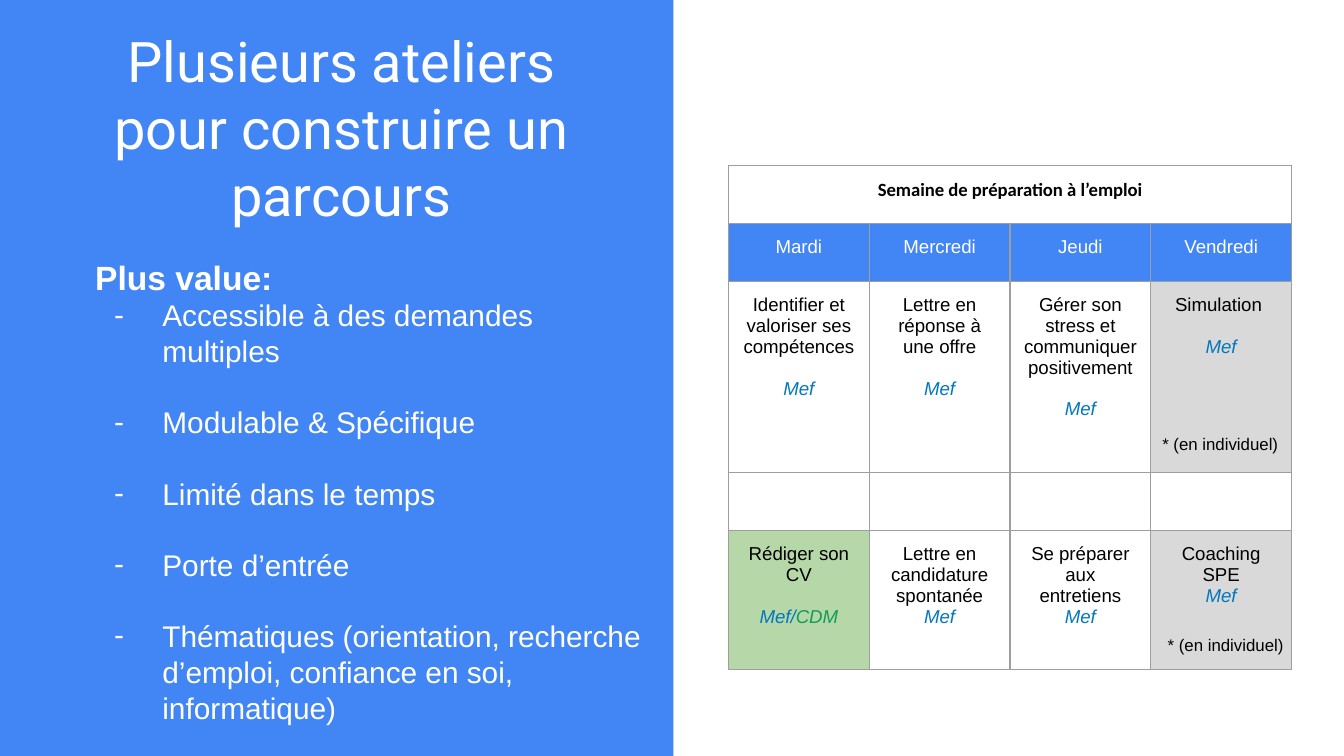
from pptx import Presentation
from pptx.dml.color import RGBColor
from pptx.enum.shapes import MSO_SHAPE
from pptx.enum.text import MSO_ANCHOR, PP_ALIGN
from pptx.oxml import parse_xml
from pptx.oxml.ns import nsdecls
from pptx.util import Inches, Pt

THEME = {
    "blue": "4285F4", "white": "FFFFFF", "black": "000000", "border": "9E9E9E",
    "mef": "0277BD", "cdm": "0F9D58", "solo": "D9D9D9", "shared": "B6D7A8",
    "title_font": "Roboto", "body_font": "Arial", "caption_font": "Calibri",
    "title": 30, "heading": 18, "bullet": 16, "cell": 10, "note": 9,
    "border_width": 0.75, "inset": 0.1,
}

TITLE = "Plusieurs ateliers pour construire un parcours"
HEADING = "Plus value:"
BENEFITS = [
    "Accessible à des demandes multiples",
    "Modulable & Spécifique",
    "Limité dans le temps",
    "Porte d’entrée",
    "Thématiques (orientation, recherche d’emploi, confiance en soi, informatique)",
]
CAPTION = "Semaine de préparation à l’emploi"
DAYS = ["Mardi", "Mercredi", "Jeudi", "Vendredi"]
MEF = [("Mef", "mef")]
MEF_CDM = [("Mef/", "mef"), ("CDM", "cdm")]
# Each workshop: name, organisers, line left free above the organisers, fill
WORKSHOPS = {
    2: [("Identifier et valoriser ses compétences", MEF, True, None),
        ("Lettre en réponse à une offre", MEF, True, None),
        ("Gérer son stress et communiquer positivement", MEF, True, None),
        ("Simulation ", MEF, True, "solo")],
    4: [("Rédiger son CV", MEF_CDM, True, "shared"),
        ("Lettre en candidature spontanée", MEF, False, None),
        ("Se préparer aux entretiens", MEF, False, None),
        ("Coaching SPE", MEF, False, "solo")],
}
NOTE = "* (en individuel)"
NOTE_PLACES = [(8.59, 4.68), (8.55, 3.18)]

SLIDE_W = 10
SLIDE_H = SLIDE_W * 9 / 16
TABLE_LEFT, TABLE_TOP, TABLE_W, TABLE_H = 5.42, 1.23, 4.19, 3.75
TALL_ROWS = {2: 1.42, 4: 1.03}
ROW_COUNT = 5
SHORT_ROW = (TABLE_H - sum(TALL_ROWS.values())) / (ROW_COUNT - len(TALL_ROWS))


def color(key):
    return RGBColor.from_string(THEME[key])


def style(paragraph, size, ink, font="body_font", bold=False, italic=False):
    for run in paragraph.runs:
        run.font.size = Pt(THEME[size])
        run.font.name = THEME[font]
        run.font.bold = bold
        run.font.italic = italic
        run.font.color.rgb = color(ink)


def set_insets(target):
    for side in ("left", "top", "right", "bottom"):
        setattr(target, f"margin_{side}", Inches(THEME["inset"]))


def add_text_area(slide, left, top, width, height):
    frame = slide.shapes.add_textbox(*map(Inches, (left, top, width, height))).text_frame
    frame.word_wrap = True
    set_insets(frame)
    return frame


def add_dash(paragraph):
    properties = paragraph._p.get_or_add_pPr()
    properties.set("marL", str(Inches(0.5)))
    properties.set("indent", str(-Inches(0.36)))
    for xml in (
        f'<a:buClr {nsdecls("a")}><a:srgbClr val="{THEME["white"]}"/></a:buClr>',
        f'<a:buFont {nsdecls("a")} typeface="{THEME["body_font"]}"/>',
        f'<a:buChar {nsdecls("a")} char="-"/>',
    ):
        properties.append(parse_xml(xml))


def frame_cell(cell, fill=None):
    """Draw the four borders of a cell, then its fill."""
    properties = cell._tc.get_or_add_tcPr()
    for side in "LRTB":
        properties.append(parse_xml(
            f'<a:ln{side} {nsdecls("a")} w="{Pt(THEME["border_width"])}"><a:solidFill>'
            f'<a:srgbClr val="{THEME["border"]}"/></a:solidFill></a:ln{side}>'))
    if fill:
        cell.fill.solid()
        cell.fill.fore_color.rgb = color(fill)
    else:
        cell.fill.background()


def write_cell(cell, text, ink, **look):
    set_insets(cell)
    paragraph = cell.text_frame.paragraphs[0]
    paragraph.text = text
    paragraph.alignment = PP_ALIGN.CENTER
    style(paragraph, "cell", ink, **look)


def write_organisers(cell, organisers, line_free):
    paragraph = cell.text_frame.add_paragraph()
    paragraph.alignment = PP_ALIGN.CENTER
    if line_free:
        paragraph.space_before = Pt(11)
    for name, _ in organisers:
        paragraph.add_run().text = name
    style(paragraph, "cell", "mef", italic=True)
    for run, (_, ink) in zip(paragraph.runs, organisers):
        run.font.color.rgb = color(ink)


def add_panel(slide):
    panel = slide.shapes.add_shape(
        MSO_SHAPE.RECTANGLE, 0, 0, Inches(5.01), Inches(SLIDE_H))
    panel.shadow.inherit = False
    panel.fill.solid()
    panel.fill.fore_color.rgb = color("blue")
    panel.line.fill.background()

    title = add_text_area(slide, 0.43, 0.18, 4.22, 1.53)
    title.vertical_anchor = MSO_ANCHOR.MIDDLE
    title.text = TITLE
    title.paragraphs[0].alignment = PP_ALIGN.CENTER
    style(title.paragraphs[0], "title", "white", font="title_font")


def add_benefits(slide):
    benefits = add_text_area(slide, 0.61, 1.81, 4.38, 3.41)
    benefits.text = HEADING
    style(benefits.paragraphs[0], "heading", "white", bold=True)
    for index, benefit in enumerate(BENEFITS):
        paragraph = benefits.add_paragraph()
        paragraph.text = benefit
        add_dash(paragraph)
        if index:
            paragraph.space_before = Pt(19)
        style(paragraph, "bullet", "white")


def add_week(slide):
    week = slide.shapes.add_table(
        ROW_COUNT, len(DAYS), Inches(TABLE_LEFT), Inches(TABLE_TOP),
        Inches(TABLE_W), Inches(TABLE_H)).table
    week.first_row = week.horz_banding = False
    for column in week.columns:
        column.width = Inches(TABLE_W / len(DAYS))
    for index, row in enumerate(week.rows):
        row.height = Inches(TALL_ROWS.get(index, SHORT_ROW))

    fills = {(1, column): "blue" for column in range(len(DAYS))}
    for row, workshops in WORKSHOPS.items():
        for column, (name, organisers, line_free, fill) in enumerate(workshops):
            fills[row, column] = fill
            write_cell(week.cell(row, column), name, "black")
            write_organisers(week.cell(row, column), organisers, line_free)
    for column, day in enumerate(DAYS):
        write_cell(week.cell(1, column), day, "white")
        for row in range(ROW_COUNT):
            frame_cell(week.cell(row, column), fills.get((row, column)))

    week.cell(0, 0).merge(week.cell(0, len(DAYS) - 1))
    write_cell(week.cell(0, 0), CAPTION, "black", font="caption_font", bold=True)


def main():
    deck = Presentation()
    deck.slide_width, deck.slide_height = Inches(SLIDE_W), Inches(SLIDE_H)
    slide = deck.slides.add_slide(deck.slide_layouts[6])
    add_panel(slide)
    add_week(slide)
    add_benefits(slide)
    for left, top in NOTE_PLACES:
        note = add_text_area(slide, left, top, 2.73, 0.12)
        note.text = NOTE
        style(note.paragraphs[0], "note", "black")
    deck.save("out.pptx")


if __name__ == "__main__":
    main()
